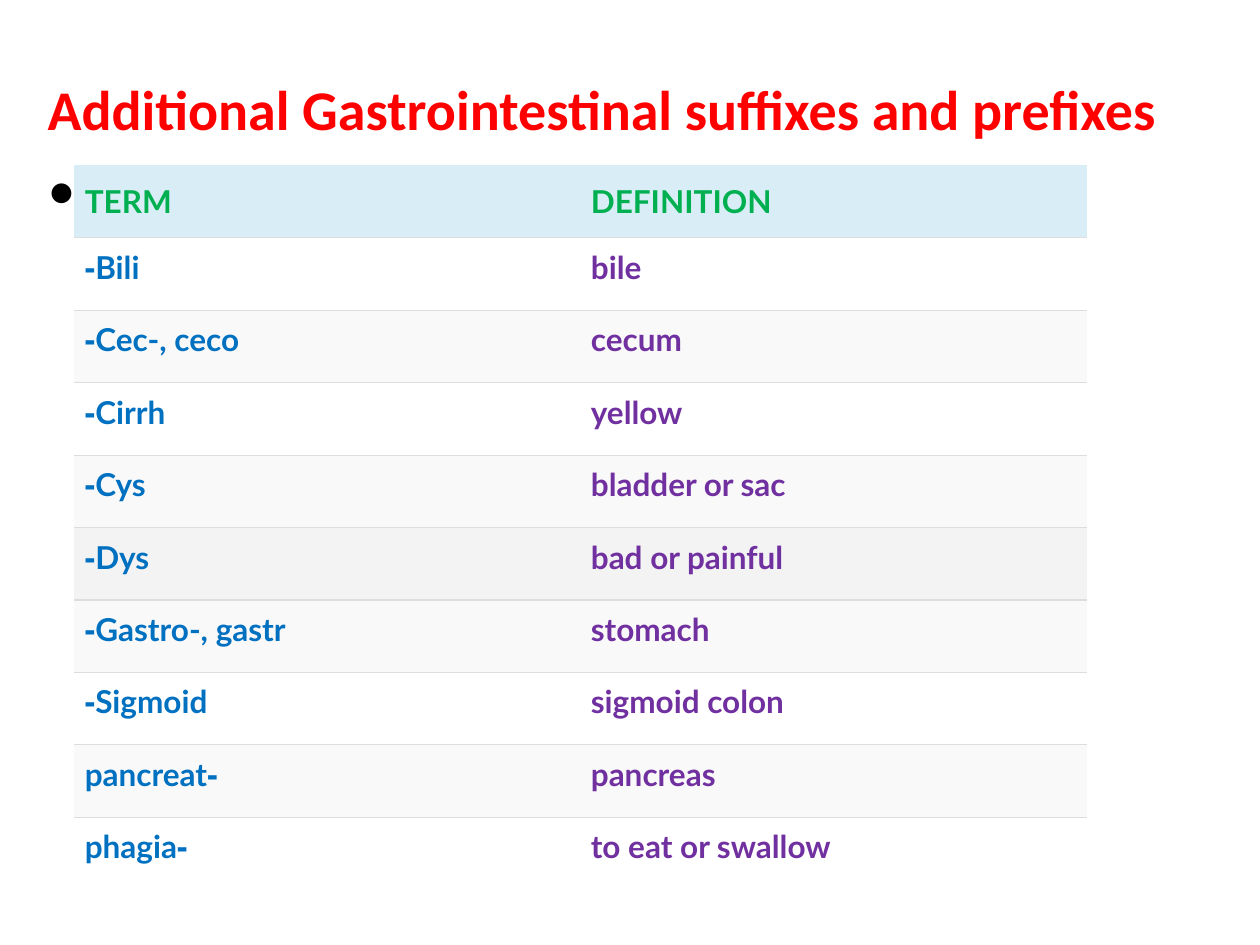
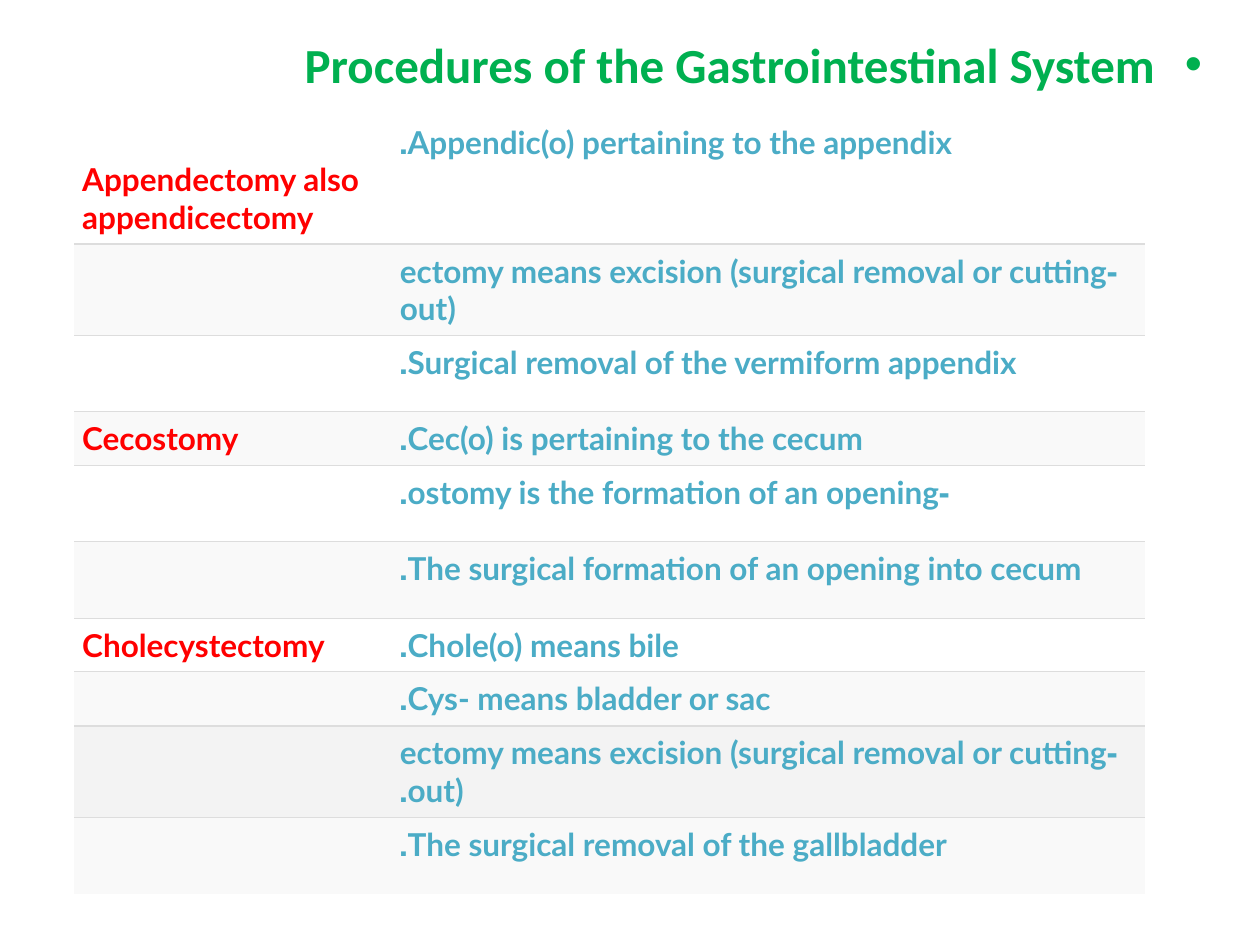
from pptx import Presentation
from pptx.dml.color import RGBColor
from pptx.enum.text import MSO_ANCHOR, MSO_AUTO_SIZE, PP_ALIGN
from pptx.oxml.ns import qn
from pptx.util import Pt
from lxml.etree import SubElement

HEADING_FONT, TABLE_FONT = "Calibri", "Lato"
RED, GREEN, BLUE, PURPLE, TEAL = "FF0000", "00B050", "0070C0", "7030A0", "4BACC6"
BLACK, WHITE, PALE, GREY, HEADER, RULE = (
    "000000", "FFFFFF", "F9F9F9", "F3F3F3", "D9EDF7", "DDDDDD")
PLAIN_TABLE_STYLE = "{2D5ABB26-0587-4C30-8999-92F81FD0307C}"
TITLE_AND_BODY, TITLE_ONLY = 1, 5


def color(hex_text):
    return RGBColor.from_string(hex_text)


class Deck:
    def __init__(self):
        self.presentation = Presentation()
        self.presentation.slide_width = Pt(720)
        self.presentation.slide_height = Pt(540)
        self.slide = None

    def new_slide(self, layout):
        layouts = self.presentation.slide_layouts
        self.slide = self.presentation.slides.add_slide(layouts[layout])

    def style(self, paragraph, font, size, hex_text, bold=True):
        for run in paragraph.runs:
            run.font.name = font
            run.font.size = Pt(size)
            run.font.bold = bold
            run.font.color.rgb = color(hex_text)

    def placeholder(self, index, text, box, size, hex_text, bold=True, rtl_bullet=False):
        shape = self.slide.placeholders[index]
        shape.left, shape.top, shape.width, shape.height = map(Pt, box)
        frame = shape.text_frame
        frame.text = text
        frame.word_wrap = True
        frame.auto_size = MSO_AUTO_SIZE.NONE
        frame.vertical_anchor = MSO_ANCHOR.TOP
        paragraph = frame.paragraphs[0]
        properties = paragraph._p.get_or_add_pPr()
        hang = Pt(27) if rtl_bullet else 0
        properties.set("marL", str(hang))
        properties.set("indent", str(-hang))
        if rtl_bullet:
            properties.set("rtl", "1")
            SubElement(properties, qn("a:buFont"), typeface="Arial")
            SubElement(properties, qn("a:buChar"), char="•")
        else:
            SubElement(properties, qn("a:buNone"))
        paragraph.alignment = PP_ALIGN.RIGHT if rtl_bullet else PP_ALIGN.LEFT
        paragraph.space_before = Pt(0)
        self.style(paragraph, HEADING_FONT, size, hex_text, bold)

    def rule(self, cell, side):
        line = SubElement(cell._tc.get_or_add_tcPr(), qn(f"a:{side}"), w=str(Pt(0.75)))
        fill = SubElement(line, qn("a:solidFill"))
        SubElement(fill, qn("a:srgbClr"), val=RULE)

    def cell(self, cell, text, fill, hex_text, inset):
        cell.margin_left = cell.margin_right = Pt(inset)
        cell.margin_top = cell.margin_bottom = Pt(inset)
        cell.fill.solid()
        cell.fill.fore_color.rgb = color(fill)
        cell.text_frame.text = text
        paragraph = cell.text_frame.paragraphs[0]
        # Right-to-left reading order, set against the left edge
        paragraph.alignment = PP_ALIGN.LEFT
        paragraph._p.get_or_add_pPr().set("rtl", "1")
        self.style(paragraph, TABLE_FONT, 18, hex_text)

    def table(self, rows, fills, position, widths, heights, column_colors, inset):
        frame = self.slide.shapes.add_table(
            len(rows), len(widths), *map(Pt, position), Pt(sum(widths)), Pt(sum(heights)))
        table = frame.table
        table.first_row = table.horz_banding = False
        table._tbl.tblPr.find(qn("a:tableStyleId")).text = PLAIN_TABLE_STYLE
        for column, width in zip(table.columns, widths):
            column.width = Pt(width)
        for number, (texts, fill, height) in enumerate(zip(rows, fills, heights)):
            table.rows[number].height = Pt(height)
            for cell, text, hex_text in zip(table.rows[number].cells, texts, column_colors):
                # Rules run between rows only
                if number > 0:
                    self.rule(cell, "lnT")
                if number < len(rows) - 1:
                    self.rule(cell, "lnB")
                self.cell(cell, text, fill, hex_text, inset)
        return table


def build_terms(deck):
    deck.new_slide(TITLE_AND_BODY)
    deck.placeholder(0, "Additional Gastrointestinal suffixes and prefixes",
                     (20, 39, 680, 48), 32, RED)
    deck.placeholder(1, "•", (20, 84, 30, 48), 32, BLACK, bold=False)
    rows = [
        ("TERM", "DEFINITION"),
        ("Bili-", "bile"),
        ("Cec-, ceco-", "cecum"),
        ("Cirrh-", "yellow"),
        ("Cys-", "bladder or sac"),
        ("Dys-", "bad or painful"),
        ("Gastro-, gastr-", "stomach"),
        ("Sigmoid-", "sigmoid colon"),
        ("-pancreat", "pancreas"),
        ("-phagia", "to eat or swallow"),
    ]
    fills = [HEADER, WHITE, PALE, WHITE, PALE, GREY, PALE, WHITE, PALE, WHITE]
    table = deck.table(rows, fills, (42.5, 94.5), [289.2] * 2, [41.4] * len(rows),
                       (BLUE, PURPLE), 6)
    # Header row
    for cell in table.rows[0].cells:
        cell.vertical_anchor = MSO_ANCHOR.MIDDLE
        deck.style(cell.text_frame.paragraphs[0], TABLE_FONT, 18, GREEN)


def build_procedures(deck):
    deck.new_slide(TITLE_ONLY)
    deck.placeholder(0, "Procedures of the Gastrointestinal System",
                     (37, 16, 657, 44), 28, GREEN, rtl_bullet=True)
    rows = [
        ("Appendectomy also appendicectomy", "Appendic(o) pertaining to the appendix."),
        ("", "-ectomy means excision (surgical removal or cutting out)"),
        ("", "Surgical removal of the vermiform appendix."),
        ("Cecostomy", "Cec(o) is pertaining to the cecum."),
        ("", "-ostomy is the formation of an opening."),
        ("", "The surgical formation of an opening into cecum."),
        ("Cholecystectomy", "Chole(o) means bile."),
        ("", "Cys- means bladder or sac."),
        ("", "-ectomy means excision (surgical removal or cutting out)."),
        ("", "The surgical removal of the gallbladder."),
    ]
    fills = [WHITE, PALE, WHITE, PALE, WHITE, PALE, WHITE, PALE, GREY, PALE]
    short, medium, tall = 30.3, 43.7, 52
    heights = [73.3, tall, medium, short, medium, medium, short, short, tall, medium]
    table = deck.table(rows, fills, (42.5, 66.2), [181.5, 430.5], heights, (RED, TEAL), 4.5)
    table.cell(0, 0).vertical_anchor = MSO_ANCHOR.BOTTOM


def main():
    deck = Deck()
    build_terms(deck)
    build_procedures(deck)
    deck.presentation.save("out.pptx")


if __name__ == "__main__":
    main()
